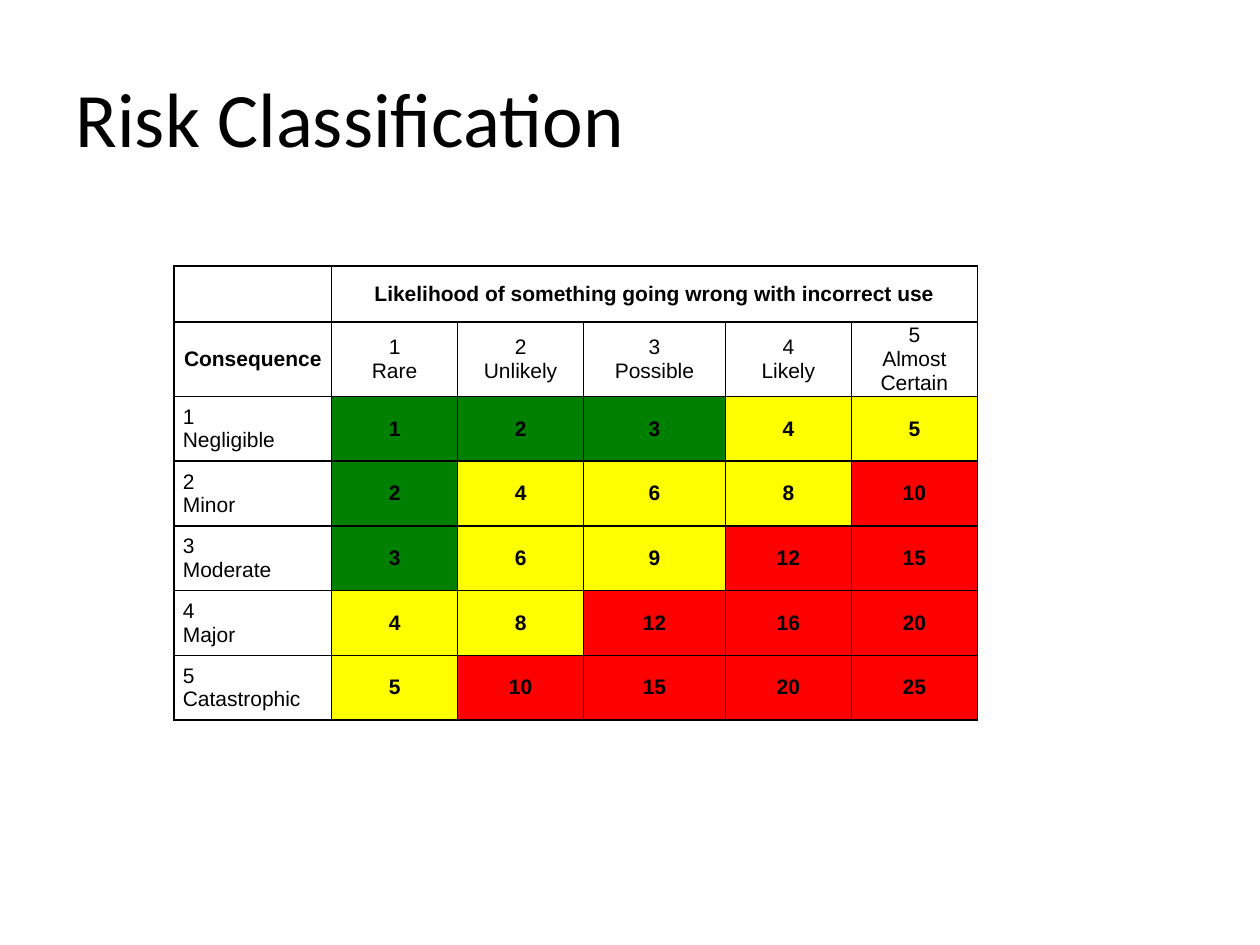
from pptx import Presentation
from pptx.dml.color import RGBColor
from pptx.enum.text import MSO_ANCHOR, PP_ALIGN
from pptx.oxml import parse_xml
from pptx.oxml.ns import nsdecls
from pptx.util import Pt

PX = 6350
BLACK = RGBColor(0, 0, 0)
GREEN = RGBColor(0, 128, 0)
YELLOW = RGBColor(255, 255, 0)
RED = RGBColor(255, 0, 0)

ODDS = ["Rare", "Unlikely", "Possible", "Likely", "Almost Certain"]
HARMS = ["Negligible", "Minor", "Moderate", "Major", "Catastrophic"]


class Deck:
    """Draw titles and risk tables on one slide in a shared style."""

    def __init__(self, wide, high):
        self.show = Presentation()
        self.show.slide_width, self.show.slide_height = wide * PX, high * PX
        self.slide = self.show.slides.add_slide(self.show.slide_layouts[5])

    def style(self, frame, font, size, bold=False, align=PP_ALIGN.LEFT):
        for para in frame.paragraphs:
            para.alignment = align
            for run in para.runs:
                run.font.name = font
                run.font.size = Pt(size)
                run.font.bold = bold
                run.font.color.rgb = BLACK

    def title(self, text, left, top, wide, high):
        shape = self.slide.shapes.title
        shape.left, shape.top = left * PX, top * PX
        shape.width, shape.height = wide * PX, high * PX
        shape.text_frame.text = text
        shape.text_frame.vertical_anchor = MSO_ANCHOR.MIDDLE
        self.style(shape.text_frame, "Calibri", 44)

    def table(self, left, top, cols, rows):
        frame = self.slide.shapes.add_table(
            len(rows), len(cols), left * PX, top * PX,
            sum(cols) * PX, sum(rows) * PX)
        grid = frame.table
        grid.first_row = grid.horz_banding = False
        for col, wide in zip(grid.columns, cols):
            col.width = wide * PX
        for row, high in zip(grid.rows, rows):
            row.height = high * PX
        for cell in grid.iter_cells():
            self.border(cell)
            cell.fill.background()
        return grid

    def border(self, cell):
        props = cell._tc.get_or_add_tcPr()
        for side in ("lnL", "lnR", "lnT", "lnB"):
            props.append(parse_xml(
                f'<a:{side} {nsdecls("a")} w="{Pt(1)}"><a:solidFill>'
                f'<a:srgbClr val="{BLACK}"/></a:solidFill></a:{side}>'))

    def cell(self, cell, text, bold=False, align=PP_ALIGN.CENTER, fill=None):
        cell.text_frame.text = text
        cell.vertical_anchor = MSO_ANCHOR.MIDDLE
        cell.margin_left = cell.margin_right = 10 * PX
        cell.margin_top = cell.margin_bottom = 0
        self.style(cell.text_frame, "Arial", 12, bold, align)
        if fill is not None:
            cell.fill.solid()
            cell.fill.fore_color.rgb = fill


def shade(score):
    if score < 4:
        return GREEN
    return YELLOW if score < 10 else RED


def main():
    deck = Deck(1440, 1080)
    deck.title("Risk Classification", 72, 43, 739, 180)
    grid = deck.table(199, 304, [180, 144, 144, 162, 144, 144],
                      [64, 85] + [74] * 5)
    grid.cell(0, 1).merge(grid.cell(0, 5))
    deck.cell(grid.cell(0, 1),
              "Likelihood of something going wrong with incorrect use", True)
    deck.cell(grid.cell(1, 0), "Consequence", True)
    for col, odds in enumerate(ODDS, 1):
        deck.cell(grid.cell(1, col), f"{col}\n{odds}")
    for row, harm in enumerate(HARMS, 1):
        deck.cell(grid.cell(row + 1, 0), f"{row}\n{harm}",
                  align=PP_ALIGN.LEFT)
        for col in range(1, len(ODDS) + 1):
            score = row * col
            deck.cell(grid.cell(row + 1, col), str(score), True,
                      fill=shade(score))
    deck.show.save("out.pptx")


if __name__ == "__main__":
    main()
